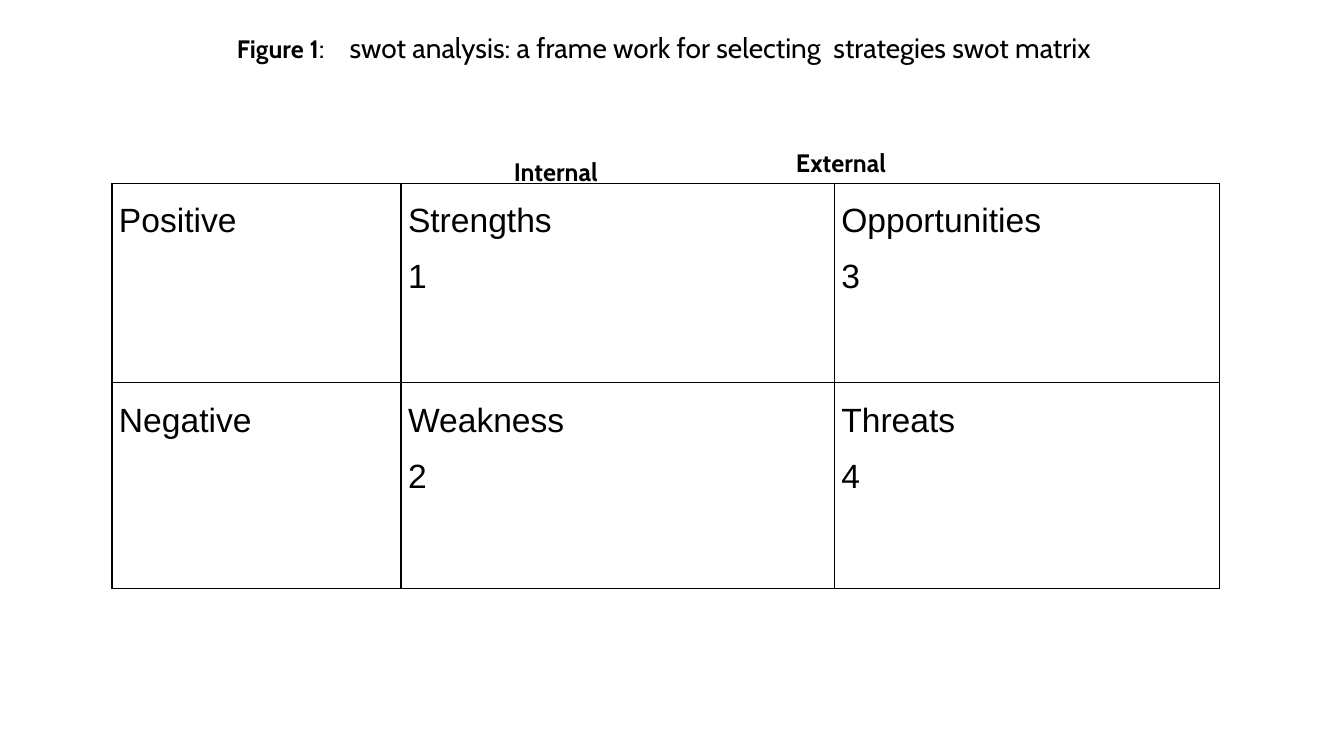
from dataclasses import dataclass

from lxml.etree import SubElement
from pptx import Presentation
from pptx.dml.color import RGBColor
from pptx.enum.text import MSO_ANCHOR, MSO_AUTO_SIZE, PP_ALIGN
from pptx.oxml import parse_xml
from pptx.oxml.ns import nsdecls, qn
from pptx.slide import Slide
from pptx.table import _Cell
from pptx.util import Pt


@dataclass(frozen=True)
class Theme:
    ink: str = "000000"
    heading_font: str = "Cabin"
    body_font: str = "Arial"
    label_size: int = 18
    title_size: int = 20
    body_size: int = 24
    border: float = 1


@dataclass(frozen=True)
class Label:
    text: str
    left: float
    top: float
    width: float


THEME = Theme()
INK = RGBColor.from_string(THEME.ink)
LABELS = [Label("Internal", 360, 108, 78), Label("External", 561.5, 102, 82)]
MATRIX = [
    ["Positive", "Strengths\n1", "Opportunities\n3"],
    ["Negative", "Weakness\n2", "Threats\n4"],
]
COLUMN_WIDTHS = [206.5, 309.5, 275]
ROW_HEIGHTS = [142.5, 147]


def add_title(s: Slide) -> None:
    title = s.shapes.title
    title.left, title.top, title.width, title.height = Pt(162), Pt(18), Pt(648), Pt(32)
    tf = title.text_frame
    tf.word_wrap = True
    tf.auto_size = MSO_AUTO_SIZE.NONE
    tf.vertical_anchor = MSO_ANCHOR.TOP
    p = tf.paragraphs[0]
    p.alignment = PP_ALIGN.LEFT
    tabs = SubElement(p._p.get_or_add_pPr(), qn("a:tabLst"))
    SubElement(tabs, qn("a:tab"), pos=str(Pt(80.5)), algn="l")
    p.font.name = THEME.heading_font
    p.font.color.rgb = INK
    for text, size, bold in [
        ("Figure 1", THEME.label_size, True),
        (":\tswot analysis: a frame work for selecting  strategies swot matrix",
         THEME.title_size, False),
    ]:
        r = p.add_run()
        r.text = text
        r.font.size = Pt(size)
        r.font.bold = bold


def add_label(s: Slide, label: Label) -> None:
    box = s.shapes.add_textbox(Pt(label.left), Pt(label.top), Pt(label.width), Pt(29))
    tf = box.text_frame
    tf.word_wrap = False
    p = tf.paragraphs[0]
    p.text = label.text
    p.font.name = THEME.heading_font
    p.font.size = Pt(THEME.label_size)
    p.font.bold = True
    p.font.color.rgb = INK


def add_borders(cell: _Cell) -> None:
    """Line all four sides; the lines must come before the fill in tcPr."""
    tc_pr = cell._tc.get_or_add_tcPr()
    for i, side in enumerate("LRTB"):
        tc_pr.insert(i, parse_xml(
            f'<a:ln{side} {nsdecls("a")} w="{Pt(THEME.border)}"><a:solidFill>'
            f'<a:srgbClr val="{THEME.ink}"/></a:solidFill></a:ln{side}>'))


def fill_cell(cell: _Cell, text: str) -> None:
    cell.fill.background()
    add_borders(cell)
    cell.margin_left = cell.margin_right = Pt(5)
    cell.margin_top = cell.margin_bottom = Pt(0)
    cell.text = text
    for p in cell.text_frame.paragraphs:
        p.alignment = PP_ALIGN.JUSTIFY
        p.line_spacing = 1.5
        p.font.name = THEME.body_font
        p.font.size = Pt(THEME.body_size)
        p.font.color.rgb = INK


def add_matrix(s: Slide) -> None:
    table = s.shapes.add_table(
        len(ROW_HEIGHTS), len(COLUMN_WIDTHS), Pt(80), Pt(131),
        Pt(sum(COLUMN_WIDTHS)), Pt(sum(ROW_HEIGHTS))).table
    table.first_row = table.horz_banding = False
    for column, width in zip(table.columns, COLUMN_WIDTHS):
        column.width = Pt(width)
    for row, height, texts in zip(table.rows, ROW_HEIGHTS, MATRIX):
        row.height = Pt(height)
        for cell, text in zip(row.cells, texts):
            fill_cell(cell, text)


def main() -> None:
    prs = Presentation()
    prs.slide_width, prs.slide_height = Pt(960), Pt(540)
    s = prs.slides.add_slide(prs.slide_layouts.get_by_name("Title Only"))
    add_matrix(s)
    for label in LABELS:
        add_label(s, label)
    add_title(s)
    prs.save("out.pptx")


if __name__ == "__main__":
    main()
